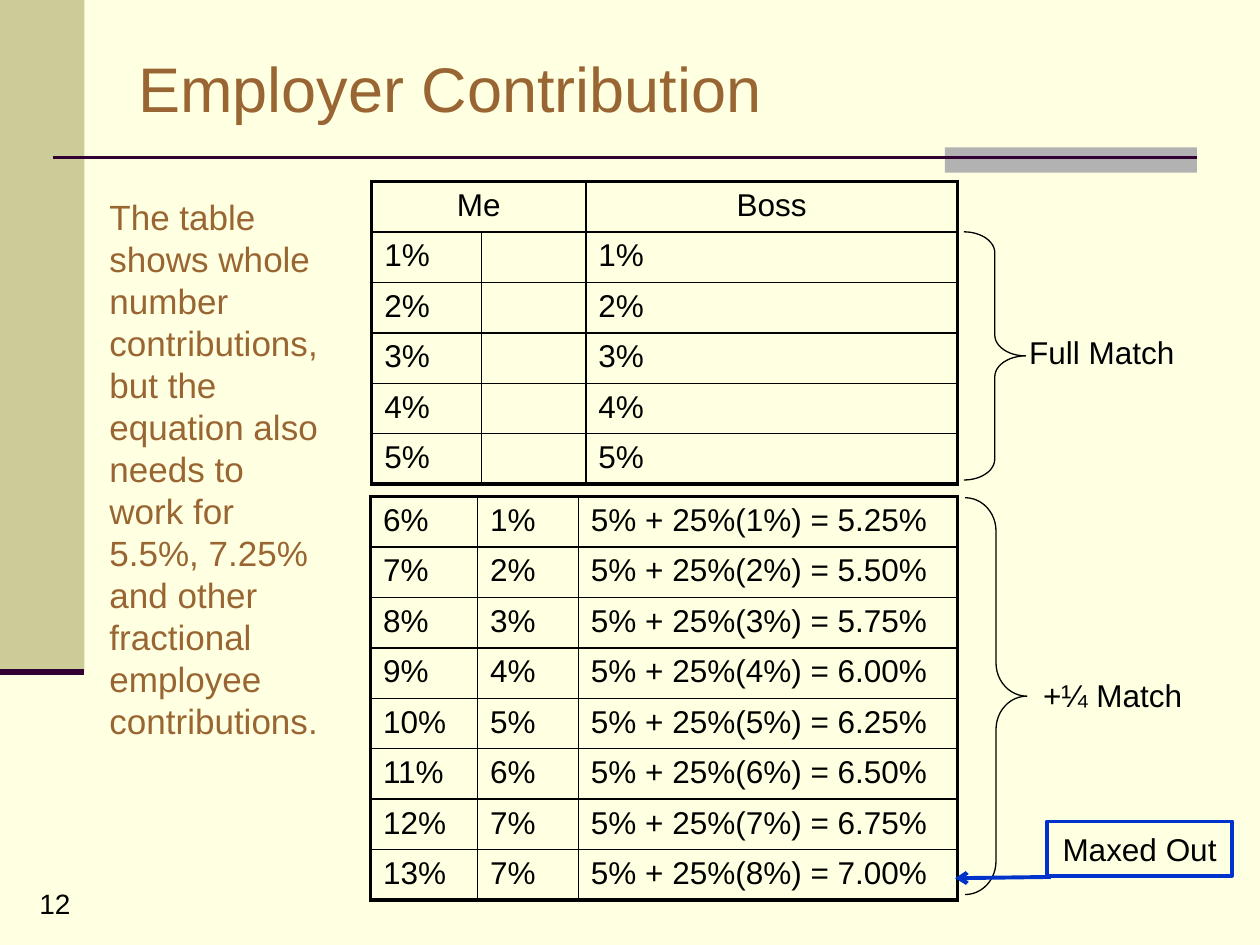
from lxml import etree
from pptx import Presentation
from pptx.dml.color import RGBColor
from pptx.enum.shapes import MSO_CONNECTOR, MSO_SHAPE
from pptx.enum.text import MSO_ANCHOR, PP_ALIGN
from pptx.oxml.ns import qn
from pptx.util import Inches, Pt

RECTANGLE = MSO_SHAPE.RECTANGLE
BRACE = MSO_SHAPE.RIGHT_BRACE
STRAIGHT = MSO_CONNECTOR.STRAIGHT
LEFT, CENTER = PP_ALIGN.LEFT, PP_ALIGN.CENTER
TOP, MIDDLE = MSO_ANCHOR.TOP, MSO_ANCHOR.MIDDLE
BLACK, BROWN, PLUM, BLUE = "000000", "996633", "330033", "0033CC"

deck = Presentation()
deck.slide_width, deck.slide_height = Inches(10), Inches(7.5)
col, row = deck.slide_width / 100, deck.slide_height / 75
slide = deck.slides.add_slide(deck.slide_layouts[6])


def color(code):
    return RGBColor.from_string(code)


def write(frame, text, size=18, ink=BLACK, align=LEFT, anchor=TOP, leading=None):
    frame.word_wrap = True
    frame.vertical_anchor = anchor
    paragraph = frame.paragraphs[0]
    paragraph.alignment = align
    if leading:
        paragraph.line_spacing = Pt(leading)
    run = paragraph.add_run()
    run.text = text
    run.font.name = "Arial"
    run.font.size = Pt(size)
    run.font.color.rgb = color(ink)


slide.background.fill.solid()
slide.background.fill.fore_color.rgb = color("FFFFE1")

for x, y, w, h, tint in [(0, 0, 6.7, 53.3, "CCCC99"), (75, 11.7, 20, 2, "B2B2B2")]:
    band = slide.shapes.add_shape(RECTANGLE, int(x * col), int(y * row), int(w * col), int(h * row))
    band.shadow.inherit = False
    band.fill.solid()
    band.fill.fore_color.rgb = color(tint)
    band.line.fill.background()

advice = ("The table shows whole number contributions, but the equation also needs "
          "to work for 5.5%, 7.25% and other fractional employee contributions.")
passages = [
    (1.9, 69.9, 4.9, 3.3, "12", dict(size=16, align=CENTER)),
    (10, 3, 85, 7.8, "Employer Contribution", dict(size=36, ink=BROWN, anchor=MIDDLE)),
    (80.7, 25.9, 15.8, 4, "Full Match", {}),
    (81.8, 53.2, 13.9, 4, "+¼ Match", {}),
    (7.7, 15, 19.1, 44.3, advice, dict(size=20, ink=BROWN, leading=24)),
]
for x, y, w, h, text, style in passages:
    passage = slide.shapes.add_textbox(int(x * col), int(y * row), int(w * col), int(h * row))
    write(passage.text_frame, text, **style)

full_match = [("Me", "", "Boss")] + [(f"{n}%", "", f"{n}%") for n in range(1, 6)]
quarter_match = [(f"{n + 5}%", f"{min(n, 7)}%", f"5% + 25%({n}%) = {5 + n / 4:.2f}%")
                 for n in range(1, 9)]
schedules = [
    (29.5, 14.4, (8.7, 8.3, 29.5), full_match),
    (29.4, 39.4, (8.5, 8, 30.1), quarter_match),
]
for x, y, widths, entries in schedules:
    schedule = slide.shapes.add_table(
        len(entries), 3, int(x * col), int(y * row),
        int(sum(widths) * col), int(3.8 * len(entries) * row)).table
    schedule.first_row = schedule.horz_banding = False
    for column, width in zip(schedule.columns, widths):
        column.width = int(width * col)
    if entries is full_match:
        schedule.cell(0, 0).merge(schedule.cell(0, 1))
    for r, entry in enumerate(entries):
        schedule.rows[r].height = int(3.8 * row)
        for c, text in enumerate(entry):
            cell = schedule.cell(r, c)
            cell.fill.background()
            if text:
                write(cell.text_frame, text, align=CENTER if text in ("Me", "Boss") else LEFT)
            outer = {"lnL": c == 0, "lnR": c == 2, "lnT": r == 0, "lnB": r == len(entries) - 1}
            properties = cell._tc.get_or_add_tcPr()
            for place, (side, is_outer) in enumerate(outer.items()):
                edge = etree.Element(qn(f"a:{side}"), w=str(Pt(2.25 if is_outer else 1)))
                ink = etree.SubElement(edge, qn("a:solidFill"))
                etree.SubElement(ink, qn("a:srgbClr"), val=BLACK)
                properties.insert(place, edge)

for x, y, w, h, curl in [(76.5, 18.4, 4.9, 19.7, 0.34), (76.6, 39.5, 4.9, 31.5, 0.54)]:
    brace = slide.shapes.add_shape(BRACE, int(x * col), int(y * row), int(w * col), int(h * row))
    brace.shadow.inherit = False
    brace.adjustments[0] = curl
    brace.adjustments[1] = 0.5
    brace.fill.background()
    brace.line.color.rgb = color(BLACK)
    brace.line.width = Pt(0.75)

limit = slide.shapes.add_shape(
    RECTANGLE, int(83.1 * col), int(65.2 * row), int(14.7 * col), int(4.3 * row))
limit.shadow.inherit = False
limit.fill.background()
limit.line.color.rgb = color(BLUE)
limit.line.width = Pt(2.25)
write(limit.text_frame, "Maxed Out", align=CENTER, anchor=MIDDLE)

strokes = [
    (4.2, 12.5, 95, 12.5, PLUM, 1.5, False),
    (0, 53.3, 6.7, 53.3, PLUM, 3.5, False),
    (83.4, 69.6, 75.8, 69.7, BLUE, 2.25, True),
]
for x1, y1, x2, y2, ink, weight, pointed in strokes:
    stroke = slide.shapes.add_connector(
        STRAIGHT, int(x1 * col), int(y1 * row), int(x2 * col), int(y2 * row))
    stroke.line.color.rgb = color(ink)
    stroke.line.width = Pt(weight)
    if pointed:
        etree.SubElement(stroke.line._get_or_add_ln(), qn("a:tailEnd"), type="arrow")
    etree.SubElement(stroke._element.spPr, qn("a:effectLst"))

deck.save("out.pptx")
